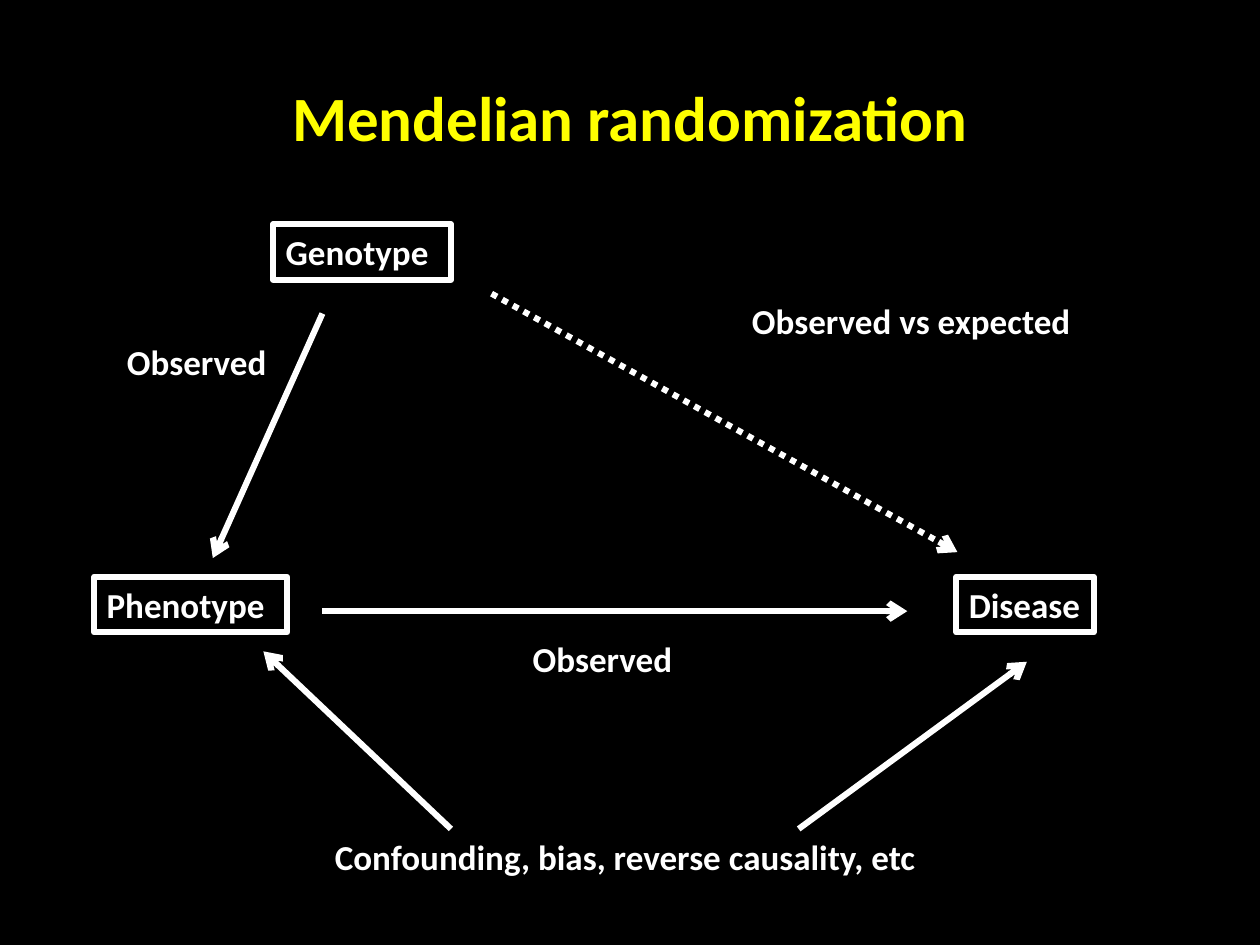
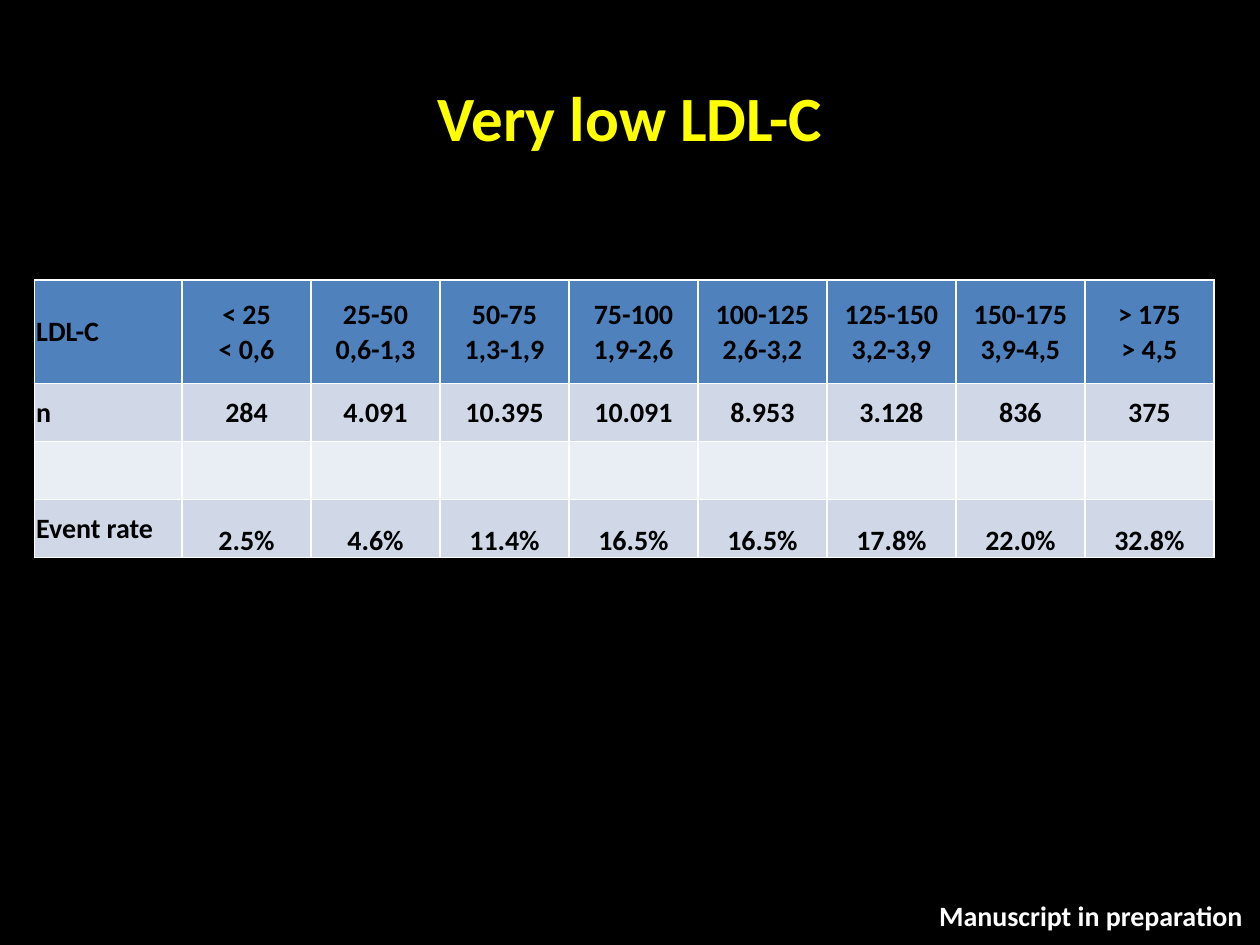
"""Builds two slides on Mendelian randomization and very low LDL-C."""
import pptx
import pptx.dml.color
import pptx.enum.shapes
import pptx.enum.text
import pptx.oxml
import pptx.oxml.ns
import pptx.util

Cm = pptx.util.Cm
Pt = pptx.util.Pt
ALIGN = pptx.enum.text.PP_ALIGN
ANCHOR = pptx.enum.text.MSO_ANCHOR

FONT = "Calibri"
BLACK, WHITE, YELLOW = "000000", "FFFFFF", "FFFF00"
LINE_WIDTH = 3.5
LABEL_HEIGHT = 1.12

VARIABLES = [
    ("Genotype", 5.51, 4.52, 3.58),
    ("Phenotype", 1.9, 11.63, 3.89),
    ("Disease", 19.28, 11.63, 2.77),
]
LABELS = [
    ("Confounding, bias, reverse causality, etc", 6.5, 16.71, 12.4),
    ("Observed", 2.31, 6.73, 3.35),
    ("Observed", 10.49, 12.73, 3.35),
    ("Observed vs expected", 14.91, 5.92, 7.01),
]
ARROWS = [
    ((6.5, 6.32), (4.29, 11.25), "solid"),
    ((6.5, 12.32), (18.29, 12.32), "solid"),
    ((9.91, 5.92), (19.3, 11.13), "sysDot"),
    ((9.09, 16.71), (5.31, 13.13), "solid"),
    ((16.1, 16.71), (20.7, 13.34), "solid"),
]

HEADINGS = [
    "LDL-C", "< 25\n< 0,6", "25-50\n0,6-1,3", "50-75\n1,3-1,9", "75-100\n1,9-2,6",
    "100-125\n2,6-3,2", "125-150\n3,2-3,9", "150-175\n3,9-4,5", "> 175\n> 4,5",
]
COUNTS = ["n", "284", "4.091", "10.395", "10.091", "8.953", "3.128", "836", "375"]
RATES = ["Event rate", "2.5%", "4.6%", "11.4%", "16.5%", "16.5%", "17.8%", "22.0%", "32.8%"]
ROWS = [
    (HEADINGS, "4F81BD", 2.09, ANCHOR.MIDDLE),
    (COUNTS, "D0D8E8", 1.17, ANCHOR.MIDDLE),
    ([""] * len(HEADINGS), "E9EDF4", 1.17, ANCHOR.MIDDLE),
    (RATES, "D0D8E8", 1.17, ANCHOR.BOTTOM),
]
FIRST_COLUMN, OTHER_COLUMN = 2.97, 2.6


def colour(code):
    return pptx.dml.color.RGBColor.from_string(code)


def xml(markup):
    return pptx.oxml.parse_xml(markup.replace(" ", f" {pptx.oxml.ns.nsdecls('a')} ", 1))


def write(frame, text, size=20, ink=WHITE, align=ALIGN.LEFT):
    for index, line in enumerate(text.split("\n")):
        para = frame.add_paragraph() if index else frame.paragraphs[0]
        para.alignment = align
        para.font.size = Pt(size)
        if line:
            span = para.add_run()
            span.text = line
            span.font.name = FONT
            span.font.size = Pt(size)
            span.font.bold = True
            span.font.color.rgb = colour(ink)


def add_text(page, text, left, top, width, height=LABEL_HEIGHT, framed=False,
             anchor=ANCHOR.TOP, **style):
    place = [Cm(length) for length in (left, top, width, height)]
    if framed:
        box = page.shapes.add_shape(pptx.enum.shapes.MSO_SHAPE.RECTANGLE, *place)
        box.shadow.inherit = False
        box.fill.background()
        box.line.color.rgb = colour(WHITE)
        box.line.width = Pt(LINE_WIDTH)
    else:
        box = page.shapes.add_textbox(*place)
    frame = box.text_frame
    frame.word_wrap = True
    frame.vertical_anchor = anchor
    if style.get("align", ALIGN.LEFT) == ALIGN.LEFT:
        frame.margin_right = 0
    write(frame, text, **style)


def add_arrow(page, start, end, dash):
    arrow = page.shapes.add_connector(
        pptx.enum.shapes.MSO_CONNECTOR.STRAIGHT, *[Cm(length) for length in start + end])
    arrow.line.color.rgb = colour(WHITE)
    arrow.line.width = Pt(LINE_WIDTH)
    outline = arrow.line._get_or_add_ln()
    outline.append(xml(f'<a:prstDash val="{dash}"/>'))
    outline.append(xml('<a:tailEnd type="arrow"/>'))
    arrow._element.spPr.append(xml("<a:effectLst />"))


def add_page(deck, title):
    page = deck.slides.add_slide(deck.slide_layouts[6])
    add_text(page, title, 1.27, 0.76, 22.86, 3.18, anchor=ANCHOR.MIDDLE,
             size=36, ink=YELLOW, align=ALIGN.CENTER)
    return page


def format_cell(cell, text, fill, anchor, align):
    cell.margin_left = cell.margin_right = cell.margin_top = Cm(0.03)
    cell.margin_bottom = 0
    cell.vertical_anchor = anchor
    for side in "LRTB":
        cell._tc.get_or_add_tcPr().append(xml(
            f'<a:ln{side} w="{Pt(1)}"><a:solidFill><a:srgbClr val="{WHITE}"/>'
            f'</a:solidFill></a:ln{side}>'))
    cell.fill.solid()
    cell.fill.fore_color.rgb = colour(fill)
    write(cell.text_frame, text, size=16, ink=BLACK, align=align)


def add_event_table(page, left, top):
    width = FIRST_COLUMN + OTHER_COLUMN * (len(HEADINGS) - 1)
    height = sum(row[2] for row in ROWS)
    table = page.shapes.add_table(
        len(ROWS), len(HEADINGS), Cm(left), Cm(top), Cm(width), Cm(height)).table
    for index, column in enumerate(table.columns):
        column.width = Cm(OTHER_COLUMN if index else FIRST_COLUMN)
    for row, (texts, fill, row_height, anchor) in zip(table.rows, ROWS):
        row.height = Cm(row_height)
        for index, (cell, text) in enumerate(zip(row.cells, texts)):
            format_cell(cell, text, fill, anchor if index else ANCHOR.MIDDLE,
                        ALIGN.CENTER if index else ALIGN.LEFT)


def main():
    deck = pptx.Presentation()
    deck.slide_width, deck.slide_height = Cm(25.4), Cm(19.05)
    backdrop = deck.slide_master.background.fill
    backdrop.solid()
    backdrop.fore_color.rgb = colour(BLACK)

    diagram = add_page(deck, "Mendelian randomization")
    for variable in VARIABLES:
        add_text(diagram, *variable, framed=True)
    for label in LABELS:
        add_text(diagram, *label)
    for arrow in ARROWS:
        add_arrow(diagram, *arrow)

    results = add_page(deck, "Very low LDL-C")
    add_event_table(results, 0.7, 5.64)
    add_text(results, "Manuscript in preparation", 18.59, 17.98, 6.71, 0.94,
             size=16, align=ALIGN.RIGHT)
    deck.save("out.pptx")


if __name__ == "__main__":
    main()
